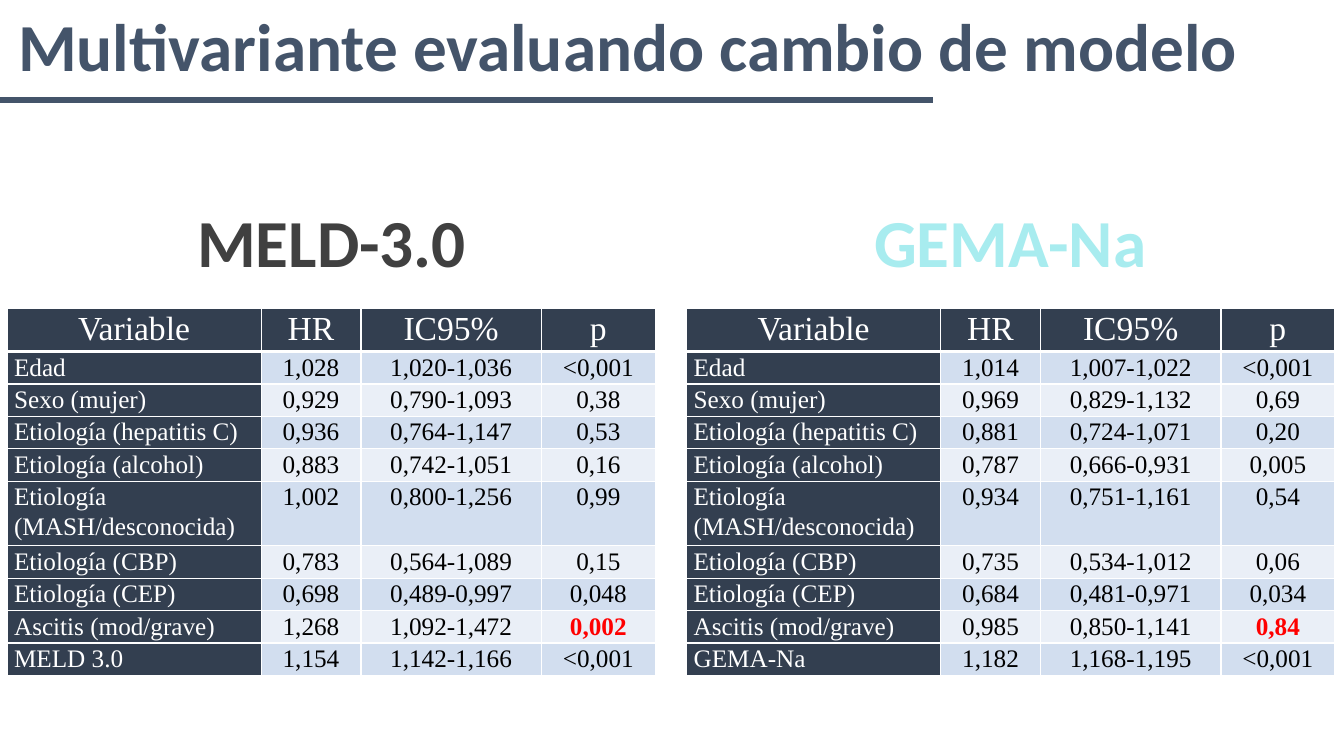
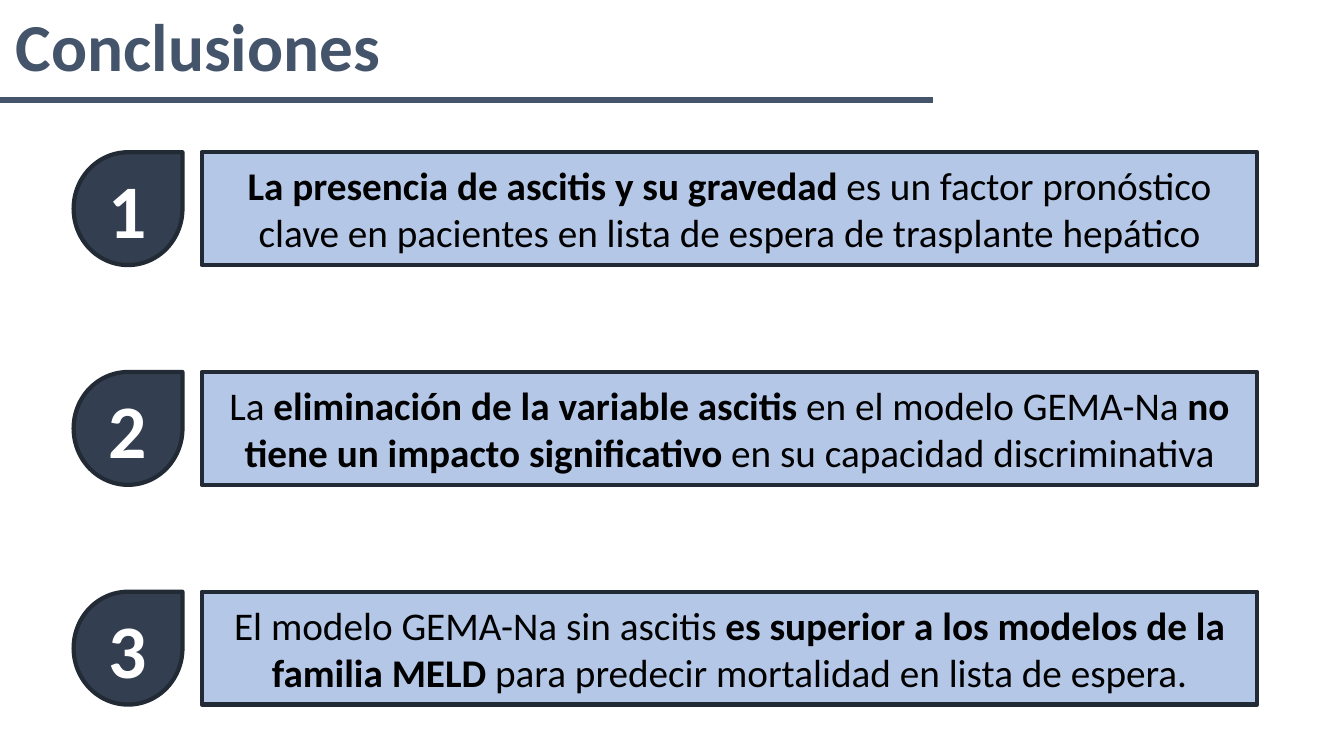
from dataclasses import dataclass

from lxml.etree import SubElement
from pptx import Presentation
from pptx.dml.color import RGBColor
from pptx.enum.dml import MSO_PATTERN
from pptx.enum.shapes import MSO_CONNECTOR, MSO_SHAPE
from pptx.enum.text import MSO_ANCHOR, MSO_AUTO_SIZE, PP_ALIGN
from pptx.oxml.ns import qn
from pptx.util import Inches, Pt

COLORS = {
    "title": "44546A",
    "navy": "333F50",
    "outline": "222A35",
    "panel": "B4C7E7",
    "band_dark": "D2DEEF",
    "band_light": "EAEFF7",
    "white": "FFFFFF",
    "black": "000000",
    "alert": "FF0000",
    "meld_hatch": "808080",
    "meld_base": "404040",
    "gema_hatch": "27CED7",
    "gema_base": "A8ECEF",
}
HEADING_FONT = "Calibri"
TABLE_FONT = "Times New Roman"

HEADERS = ("Variable", "HR", "IC95%", "p")
COLUMN_WIDTHS = (2.52, 0.99, 1.79, 1.13)
ROW_HEIGHT = 0.31
TABLE_TOP = 3.06
HIGHLIGHTED_VARIABLE = "Ascitis (mod/grave)"
VARIABLES = (
    "Edad",
    "Sexo (mujer)",
    "Etiología (hepatitis C)",
    "Etiología (alcohol)",
    "Etiología (MASH/desconocida)",
    "Etiología (CBP)",
    "Etiología (CEP)",
    HIGHLIGHTED_VARIABLE,
)

CONCLUSION_TOP = 1.51
CONCLUSION_STEP = 2.18
CONCLUSION_HEIGHT = 1.12


@dataclass(frozen=True)
class Model:
    heading: str
    heading_left: float
    heading_width: float
    pattern: MSO_PATTERN
    hatch: str
    base: str
    table_left: float
    score: str
    results: tuple[tuple[str, str, str], ...]


@dataclass(frozen=True)
class Span:
    text: str
    bold: bool = False


MODELS = (
    Model(
        "MELD-3.0", 1.84, 2.9, MSO_PATTERN.DARK_UPWARD_DIAGONAL,
        "meld_hatch", "meld_base", 0.07, "MELD 3.0",
        (
            ("1,028", "1,020-1,036", "<0,001"),
            ("0,929", "0,790-1,093", "0,38"),
            ("0,936", "0,764-1,147", "0,53"),
            ("0,883", "0,742-1,051", "0,16"),
            ("1,002", "0,800-1,256", "0,99"),
            ("0,783", "0,564-1,089", "0,15"),
            ("0,698", "0,489-0,997", "0,048"),
            ("1,268", "1,092-1,472", "0,002"),
            ("1,154", "1,142-1,166", "<0,001"),
        ),
    ),
    Model(
        "GEMA-Na", 8.39, 3.26, MSO_PATTERN.NARROW_HORIZONTAL,
        "gema_hatch", "gema_base", 6.81, "GEMA-Na",
        (
            ("1,014", "1,007-1,022", "<0,001"),
            ("0,969", "0,829-1,132", "0,69"),
            ("0,881", "0,724-1,071", "0,20"),
            ("0,787", "0,666-0,931", "0,005"),
            ("0,934", "0,751-1,161", "0,54"),
            ("0,735", "0,534-1,012", "0,06"),
            ("0,684", "0,481-0,971", "0,034"),
            ("0,985", "0,850-1,141", "0,84"),
            ("1,182", "1,168-1,195", "<0,001"),
        ),
    ),
)

CONCLUSIONS = (
    (
        Span("La presencia de ascitis y su gravedad ", True),
        Span("es un factor pronóstico clave en pacientes en lista de espera "
             "de trasplante hepático"),
    ),
    (
        Span("La"),
        Span(" eliminación de la variable ascitis ", True),
        Span("en el modelo GEMA-Na "),
        Span("no tiene un impacto significativo", True),
        Span(" en su capacidad discriminativa"),
    ),
    (
        Span("El modelo GEMA-Na sin ascitis "),
        Span("es superior a los modelos de la familia MELD ", True),
        Span("para predecir mortalidad en lista de espera."),
    ),
)


def rgb(name: str) -> RGBColor:
    return RGBColor.from_string(COLORS[name])


def style_font(font, name: str, size: float, color: str, bold: bool) -> None:
    font.name = name
    font.size = Pt(size)
    font.bold = bold
    font.color.rgb = rgb(color)


def add_heading(page, text: str, left: float, top: float, width: float):
    """Add a one-line heading and return its font."""
    box = page.shapes.add_textbox(
        Inches(left), Inches(top), Inches(width), Inches(0.91))
    frame = box.text_frame
    frame.text = text
    frame.word_wrap = False
    frame.auto_size = MSO_AUTO_SIZE.SHAPE_TO_FIT_TEXT
    para = frame.paragraphs[0]
    para.alignment = PP_ALIGN.CENTER
    font = para.runs[0].font
    style_font(font, HEADING_FONT, 48, "title", True)
    return font


def add_page(deck, title: str, left: float, width: float):
    """Add a blank slide with the shared rule and title."""
    page = deck.slides.add_slide(deck.slide_layouts[6])
    rule = page.shapes.add_connector(
        MSO_CONNECTOR.STRAIGHT,
        Inches(-0.01), Inches(0.99), Inches(9.25), Inches(0.99))
    rule.line.color.rgb = rgb("title")
    rule.line.width = Pt(4)
    SubElement(rule._element.spPr, qn("a:effectLst"))
    add_heading(page, title, left, -0.01, width)
    return page


def set_borders(cell, bottom: float) -> None:
    """Draw white borders, 1 pt except at the bottom; call before filling."""
    properties = cell._tc.get_or_add_tcPr()
    for side, width in (("L", 1), ("R", 1), ("T", 1), ("B", bottom)):
        line = SubElement(properties, qn(f"a:ln{side}"), w=str(Pt(width)))
        fill = SubElement(line, qn("a:solidFill"))
        SubElement(fill, qn("a:srgbClr"), val=COLORS["white"])


def fill_cell(cell, text: str, row: int, column: int, alert: bool) -> None:
    is_header, is_label = row == 0, column == 0
    dark = is_header or is_label
    cell.margin_left = cell.margin_right = Inches(0.07)
    cell.margin_top = cell.margin_bottom = 0
    set_borders(cell, 3 if is_header else 1)
    cell.fill.solid()
    band = "band_dark" if row % 2 else "band_light"
    cell.fill.fore_color.rgb = rgb("navy" if dark else band)
    cell.text_frame.text = text
    para = cell.text_frame.paragraphs[0]
    centered = is_header or not is_label
    para.alignment = PP_ALIGN.CENTER if centered else PP_ALIGN.LEFT
    para.line_spacing = 1.07
    para.space_after = Pt(8)
    color = "alert" if alert else "white" if dark else "black"
    style_font(para.runs[0].font, TABLE_FONT, 24 if is_header else 18,
               color, alert)


def add_model_table(page, model: Model) -> None:
    labels = (*VARIABLES, model.score)
    rows = [HEADERS] + [
        (label, *values) for label, values in zip(labels, model.results)]
    table = page.shapes.add_table(
        len(rows), len(HEADERS), Inches(model.table_left), Inches(TABLE_TOP),
        Inches(sum(COLUMN_WIDTHS)), Inches(ROW_HEIGHT * len(rows))).table
    for column, width in zip(table.columns, COLUMN_WIDTHS):
        column.width = Inches(width)
    for row_index, values in enumerate(rows):
        table.rows[row_index].height = Inches(ROW_HEIGHT)
        for column_index, text in enumerate(values):
            alert = (values[0] == HIGHLIGHTED_VARIABLE
                     and column_index == len(HEADERS) - 1)
            fill_cell(table.cell(row_index, column_index), text,
                      row_index, column_index, alert)


def add_model_heading(page, model: Model) -> None:
    font = add_heading(page, model.heading, model.heading_left, 1.94,
                       model.heading_width)
    font.fill.patterned()
    font.fill.pattern = model.pattern
    font.fill.fore_color.rgb = rgb(model.hatch)
    font.fill.back_color.rgb = rgb(model.base)


def add_panel(page, kind: MSO_SHAPE, left: float, top: float, width: float,
              fill: str, spans: tuple[Span, ...], size: float,
              color: str) -> None:
    """Add an outlined shape with centred text."""
    panel = page.shapes.add_shape(
        kind, Inches(left), Inches(top), Inches(width),
        Inches(CONCLUSION_HEIGHT))
    panel.shadow.inherit = False
    panel.fill.solid()
    panel.fill.fore_color.rgb = rgb(fill)
    panel.line.color.rgb = rgb("outline")
    panel.line.width = Pt(3)
    frame = panel.text_frame
    frame.word_wrap = True
    frame.vertical_anchor = MSO_ANCHOR.MIDDLE
    para = frame.paragraphs[0]
    para.alignment = PP_ALIGN.CENTER
    for span in spans:
        run = para.add_run()
        run.text = span.text
        style_font(run.font, HEADING_FONT, size, color, span.bold)


def add_conclusion(page, number: int, spans: tuple[Span, ...]) -> None:
    top = CONCLUSION_TOP + (number - 1) * CONCLUSION_STEP
    add_panel(page, MSO_SHAPE.RECTANGLE, 2, top, 10.47, "panel",
              spans, 28, "black")
    add_panel(page, MSO_SHAPE.TEAR, 0.73, top, 1.08, "navy",
              (Span(str(number), True),), 54, "white")


def main() -> None:
    deck = Presentation()
    deck.slide_width = Inches(13.33)
    deck.slide_height = Inches(7.5)

    page = add_page(deck, "Multivariante evaluando cambio de modelo",
                    0.02, 12.42)
    for model in MODELS:
        add_model_table(page, model)
        add_model_heading(page, model)

    page = add_page(deck, "Conclusiones", 0.04, 3.85)
    for number, spans in enumerate(CONCLUSIONS, start=1):
        add_conclusion(page, number, spans)

    deck.save("out.pptx")


if __name__ == "__main__":
    main()
